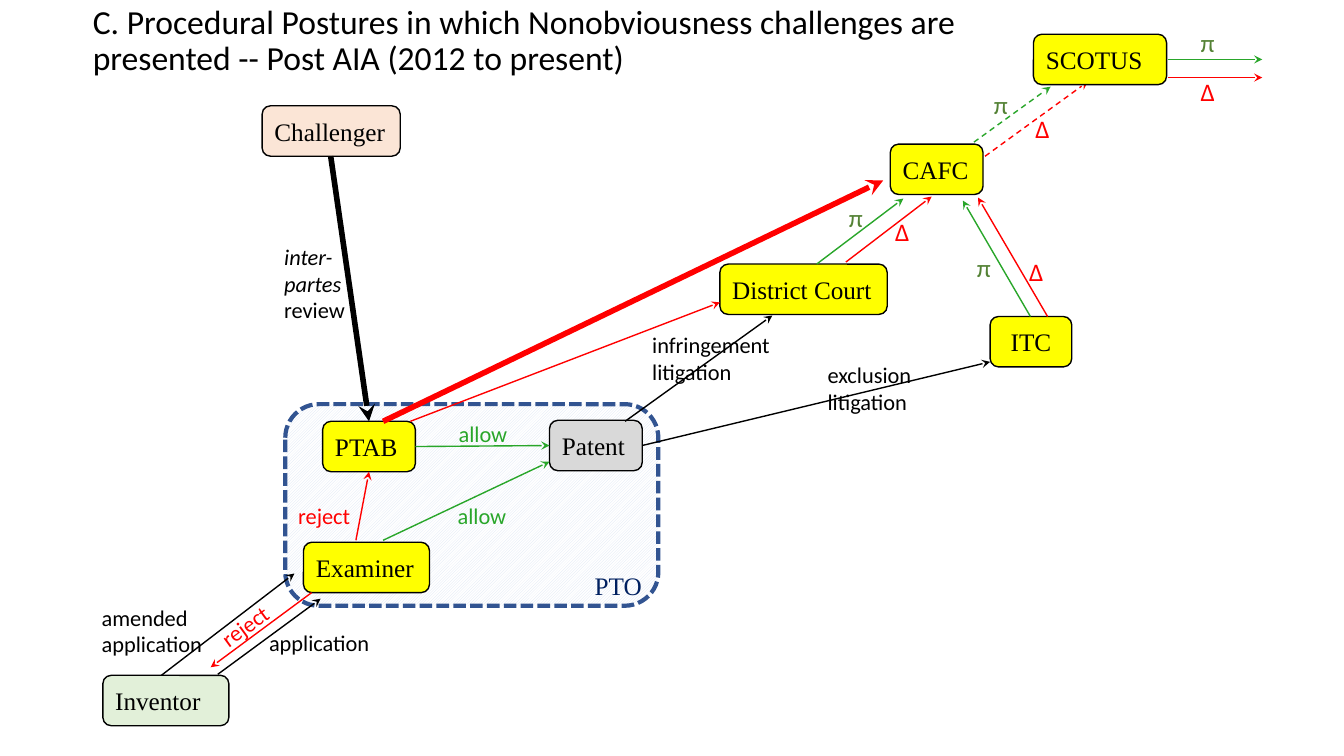
from lxml import etree
from pptx import Presentation
from pptx import util as u
from pptx.dml.color import RGBColor
from pptx.enum import dml, shapes, text
from pptx.oxml.ns import qn

W, H = 13.33, 7.5
SERIF, SANS = "Times New Roman", "Calibri"
BLACK, RED, GREEN, OLIVE = "000000", "FF0000", "29A62A", "548235"
YELLOW, GREY = "FFFF00", "D9D9D9"
NODE_H = 0.5

prs = Presentation()
prs.slide_width, prs.slide_height = u.Inches(W), u.Inches(H)
s = prs.slides.add_slide(prs.slide_layouts[5])


def color(hex_code):
    return RGBColor.from_string(hex_code)


def place(box, x, y):
    """Slide position of a point given in inches from the box's corner."""
    return u.Inches(box[0] + x), u.Inches(box[1] + y)


def style(p, size, font, hex_code):
    p.font.size, p.font.name = u.Pt(size), font
    p.font.color.rgb = color(hex_code)


def round_rect(box, x, y, w, h, line, width):
    sp = s.shapes.add_shape(shapes.MSO_SHAPE.ROUNDED_RECTANGLE,
                            *place(box, x, y), u.Inches(w), u.Inches(h))
    sp.shadow.inherit = False
    sp.line.color.rgb = color(line)
    sp.line.width = u.Pt(width)
    return sp


def node(box, x, y, w, name, fill=YELLOW, align=text.PP_ALIGN.LEFT):
    sp = round_rect(box, x, y, w, NODE_H, BLACK, 1)
    sp.fill.solid()
    sp.fill.fore_color.rgb = color(fill)
    tf = sp.text_frame
    tf.vertical_anchor = text.MSO_ANCHOR.MIDDLE
    p = tf.paragraphs[0]
    p.text, p.alignment = name, align
    style(p, 18, SERIF, BLACK)


def label(box, x, y, w, lines, hex_code=BLACK, size=16, font=SANS,
          wrap=False, rotation=0, italic=0):
    """Text label; the first `italic` lines are set in italics."""
    lines = lines.split("\n")
    h = 0.1 + len(lines) * size / 60
    sp = s.shapes.add_textbox(*place(box, x, y), u.Inches(w), u.Inches(h))
    sp.rotation = rotation
    tf = sp.text_frame
    tf.word_wrap = wrap
    tf.auto_size = text.MSO_AUTO_SIZE.SHAPE_TO_FIT_TEXT
    for i, line in enumerate(lines):
        p = tf.paragraphs[0] if i == 0 else tf.add_paragraph()
        p.text = line
        style(p, size, font, hex_code)
        p.font.italic = i < italic


def parties(box, plaintiff, defendant):
    """The plaintiff and defendant signs beside a pair of arrows."""
    label(box, *plaintiff, 0.39, "π", OLIVE, 18, wrap=True)
    label(box, *defendant, 0.56, "Δ", RED, 18, wrap=True)


def arrow(box, start, end, hex_code=BLACK, width=1, dashed=False):
    c = s.shapes.add_connector(shapes.MSO_CONNECTOR.STRAIGHT,
                               *place(box, *start), *place(box, *end))
    c.line.color.rgb = color(hex_code)
    c.line.width = u.Pt(width)
    if dashed:
        c.line.dash_style = dml.MSO_LINE.DASH
    etree.SubElement(c.line._get_or_add_ln(), qn("a:tailEnd"), type="stealth")
    etree.SubElement(c._element.spPr, qn("a:effectLst"))


def title(box, w, h):
    sp = s.shapes.title
    sp.left, sp.top = place(box, 0, 0)
    sp.width, sp.height = u.Inches(w), u.Inches(h)
    tf = sp.text_frame
    tf.word_wrap = True
    tf.auto_size = text.MSO_AUTO_SIZE.NONE
    tf.vertical_anchor = text.MSO_ANCHOR.MIDDLE
    p = tf.paragraphs[0]
    p.text = ("C. Procedural Postures in which Nonobviousness challenges are "
              "presented -- Post AIA (2012 to present)")
    p.alignment, p.line_spacing = text.PP_ALIGN.LEFT, 0.9
    style(p, 24, SANS, BLACK)


def courts(box):
    # District Court to CAFC
    node(box, 0, 2.28, 1.66, "District Court")
    arrow(box, (0.96, 2.28), (1.82, 1.63), GREEN)
    arrow(box, (1.25, 2.26), (2.1, 1.61), RED)
    parties(box, (1.18, 1.62), (1.64, 1.76))
    # ITC to CAFC
    node(box, 2.68, 2.8, 0.81, "ITC", align=text.PP_ALIGN.CENTER)
    arrow(box, (3.08, 2.8), (2.41, 1.65), GREEN)
    arrow(box, (3.25, 2.8), (2.56, 1.62), RED)
    parties(box, (2.45, 2.11), (2.97, 2.15))
    # CAFC to SCOTUS
    node(box, 1.69, 1.09, 0.92, "CAFC")
    arrow(box, (2.52, 1.07), (3.28, 0.52), GREEN, dashed=True)
    arrow(box, (2.63, 1.21), (3.65, 0.47), RED, dashed=True)
    parties(box, (2.62, 0.5), (3.03, 0.74))
    # SCOTUS outcomes
    node(box, 3.11, 0, 1.32, "SCOTUS")
    arrow(box, (4.44, 0.25), (5.38, 0.25), GREEN)
    arrow(box, (4.44, 0.43), (5.38, 0.43), RED)
    parties(box, (4.67, -0.12), (4.67, 0.37))


def patent_office(box, w, h):
    # Frame
    sp = round_rect(box, 0, 0, w, h, "325491", 3)
    sp.line.dash_style = dml.MSO_LINE.SQUARE_DOT
    sp.fill.patterned()
    sp.fill.pattern = dml.MSO_PATTERN.LIGHT_UPWARD_DIAGONAL
    sp.fill.fore_color.rgb = color("DAE3F3")
    sp.fill.back_color.rgb = color("FFFFFF")
    label(box, 2.97, 1.6, 0.67, "PTO", "002060", 18, SERIF)
    # Bodies and the granted patent
    node(box, 0.18, 1.37, 1.25, "Examiner")
    node(box, 0.37, 0.17, 0.92, "PTAB")
    node(box, 2.62, 0.16, 0.92, "Patent", GREY)
    # Decisions
    arrow(box, (0.7, 1.35), (0.83, 0.67), RED)
    label(box, 0.03, 0.92, 0.73, "reject", RED)
    arrow(box, (0.97, 1.35), (2.62, 0.57), GREEN)
    label(box, 1.61, 0.92, 0.69, "allow", GREEN)
    arrow(box, (1.29, 0.42), (2.62, 0.41), GREEN)
    label(box, 1.62, 0.11, 0.69, "allow", GREEN)


def routes_to_court(box):
    # From the patent
    label(box, 2.57, 1.45, 1.38, "infringement\nlitigation")
    label(box, 4.31, 1.74, 1.06, "exclusion\nlitigation")
    arrow(box, (2.57, 2.63), (6.02, 1.8))
    arrow(box, (2.4, 2.39), (3.86, 1.34))
    # From PTAB
    arrow(box, (0.27, 2.39), (3.34, 1.21), RED)
    arrow(box, (0, 2.39), (4.96, 0), RED, 4)


def challenge(box):
    node(box, 0, 0, 1.37, "Challenger", "FBE5D6")
    label(box, 0.12, 1.31, 0.83, "inter-\npartes\nreview", italic=2)
    arrow(box, (0.68, NODE_H), (1.06, 3.13), width=4)


def prosecution(box):
    node(box, 0, 1.01, 1.25, "Inventor", "E2F0D9")
    label(box, -0.11, 0.25, 1.21, "amended\napplication")
    label(box, 1.05, 0.33, 0.73, "reject", RED, rotation=324)
    label(box, 1.55, 0.5, 1.2, "application")
    arrow(box, (0.58, 1.01), (1.9, 0))
    arrow(box, (2.07, 0.19), (1.07, 0.93), RED)
    arrow(box, (1.14, 1), (2.16, 0.25))


title((0.82, 0.04), 9, 0.75)
courts((7.14, 0.34))
patent_office((2.83, 4.01), 3.7, 2)
routes_to_court((3.8, 1.79))
challenge((2.6, 1.05))
prosecution((1.02, 5.69))
prs.save("out.pptx")
